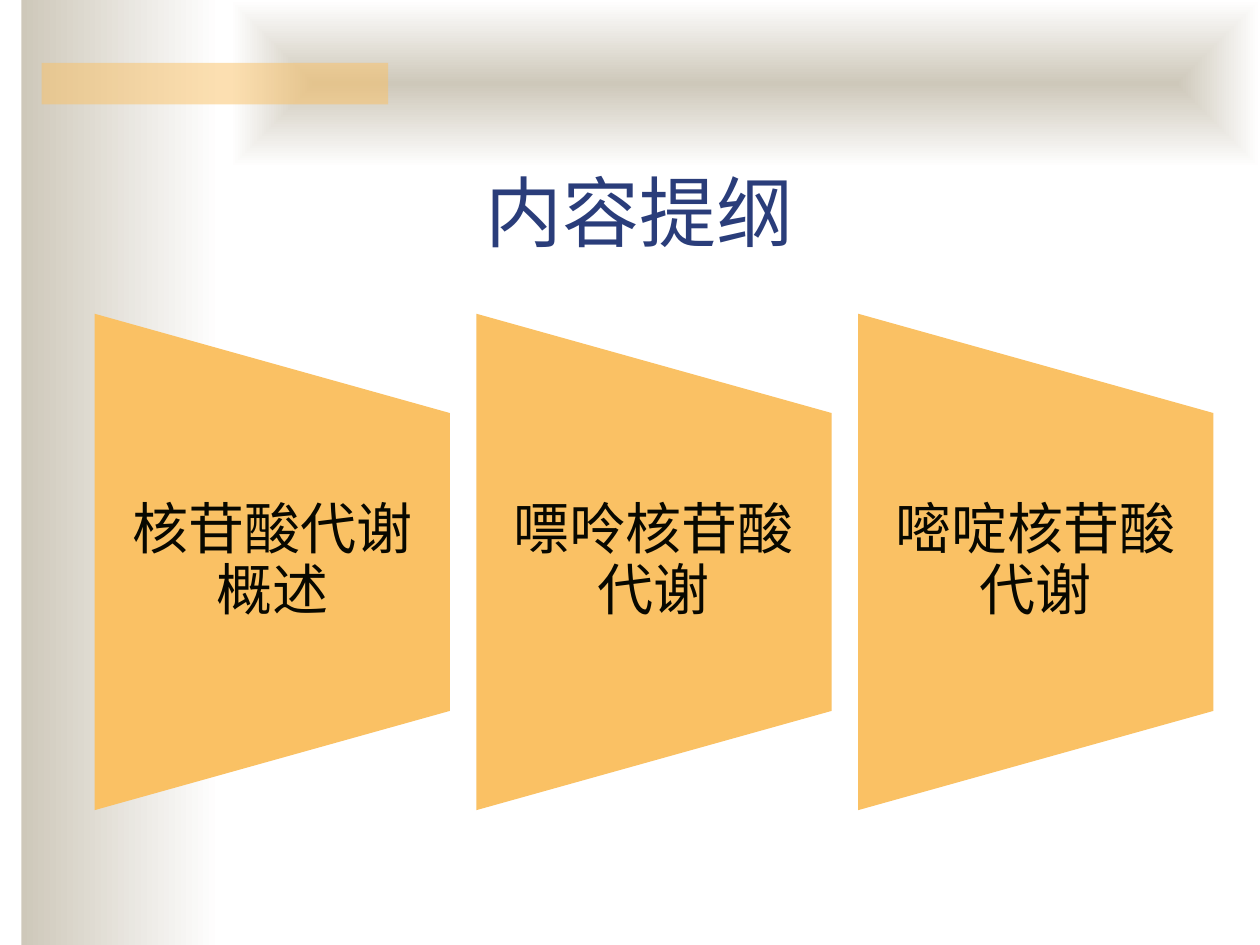
from lxml.etree import SubElement
from pptx import Presentation
from pptx.dml.color import RGBColor
from pptx.enum.shapes import MSO_SHAPE
from pptx.enum.text import MSO_ANCHOR, PP_ALIGN
from pptx.oxml.ns import qn
from pptx.util import Inches, Pt

COLORS = {
    "sand": "CEC8BA",
    "white": "FFFFFF",
    "orange": "FAC164",
    "navy": "2A3D7A",
    "ink": "080800",
}
FONT = "Noto Sans CJK SC"
TOPICS = ["核苷酸代谢概述", "嘌呤核苷酸代谢", "嘧啶核苷酸代谢"]


def color(name):
    return RGBColor.from_string(COLORS[name])


class SlideBuilder:
    def __init__(self, slide):
        self.slide = slide

    def shape(self, kind, left, top, width, height):
        shape = self.slide.shapes.add_shape(
            kind, Inches(left), Inches(top), Inches(width), Inches(height))
        shape.shadow.inherit = False
        shape.line.fill.background()
        return shape

    def solid(self, kind, left, top, width, height, fill, opacity=100):
        shape = self.shape(kind, left, top, width, height)
        shape.fill.solid()
        shape.fill.fore_color.rgb = color(fill)
        if opacity < 100:
            color_element = shape._element.spPr.find(".//" + qn("a:srgbClr"))
            SubElement(color_element, qn("a:alpha"), val=str(opacity * 1000))
        return shape

    def gradient(self, left, top, width, height, from_center=False):
        shape = self.shape(MSO_SHAPE.RECTANGLE, left, top, width, height)
        shape.fill.gradient()
        shape.fill.gradient_angle = 0
        for stop, name, position in zip(
                shape.fill.gradient_stops, ("sand", "white"), (0, 1)):
            stop.color.rgb = color(name)
            stop.position = position
        if from_center:
            gradient = shape._element.spPr.find(qn("a:gradFill"))
            gradient.remove(gradient.find(qn("a:lin")))
            center = SubElement(gradient, qn("a:path"), path="shape")
            SubElement(center, qn("a:fillToRect"),
                       l="50000", t="50000", r="50000", b="50000")
        return shape

    def set_text(self, text_frame, text, size, fill, anchor):
        text_frame.text = text
        text_frame.word_wrap = True
        text_frame.vertical_anchor = anchor
        paragraph = text_frame.paragraphs[0]
        paragraph.alignment = PP_ALIGN.CENTER
        font = paragraph.runs[0].font
        font.size = Pt(size)
        font.name = FONT
        font.color.rgb = color(fill)
        SubElement(font._element, qn("a:ea"), typeface=FONT)
        return paragraph

    def title(self, text, left, top, width, height):
        title = self.slide.shapes.title
        title.left, title.top = Inches(left), Inches(top)
        title.width, title.height = Inches(width), Inches(height)
        self.set_text(title.text_frame, text, 44, "navy", MSO_ANCHOR.BOTTOM)
        # Bring the title in front of the decoration
        self.slide.shapes._spTree.append(title._element)

    def label(self, text, left, top, width, height):
        box = self.slide.shapes.add_textbox(
            Inches(left), Inches(top), Inches(width), Inches(height))
        frame = box.text_frame
        frame.margin_left = frame.margin_right = Inches(0.22)
        frame.margin_top = frame.margin_bottom = 0
        paragraph = self.set_text(frame, text, 32, "ink", MSO_ANCHOR.MIDDLE)
        paragraph.line_spacing = 0.9
        paragraph.space_after = Pt(11.2)

    def topic(self, text, left, top, width, height):
        # The preset is upright, so its sides swap when it is turned
        shift = (height - width) / 2
        panel = self.solid(MSO_SHAPE.FLOWCHART_MANUAL_OPERATION,
                           left - shift, top + shift, height, width, "orange")
        panel.rotation = 270
        self.label(text, left, top + height / 5, width, height * 0.6)


def main():
    presentation = Presentation()
    presentation.slide_width = Inches(10)
    presentation.slide_height = Inches(7.5)
    slide = presentation.slides.add_slide(presentation.slide_layouts[5])
    builder = SlideBuilder(slide)

    # Background decoration
    builder.gradient(0.17, 0, 1.58, 7.5)
    builder.gradient(1.83, 0, 8.17, 1.33, from_center=True)
    builder.solid(MSO_SHAPE.RECTANGLE, 0.33, 0.5, 2.75, 0.33, "orange", 50)

    # Title
    builder.title("内容提纲", 0.83, 0.84, 8.5, 1.25)

    # Topic panels, evenly spaced
    for index, topic in enumerate(TOPICS):
        builder.topic(topic, 0.75 + index * 3.03, 2.49, 2.82, 3.94)

    presentation.save("out.pptx")


if __name__ == "__main__":
    main()
